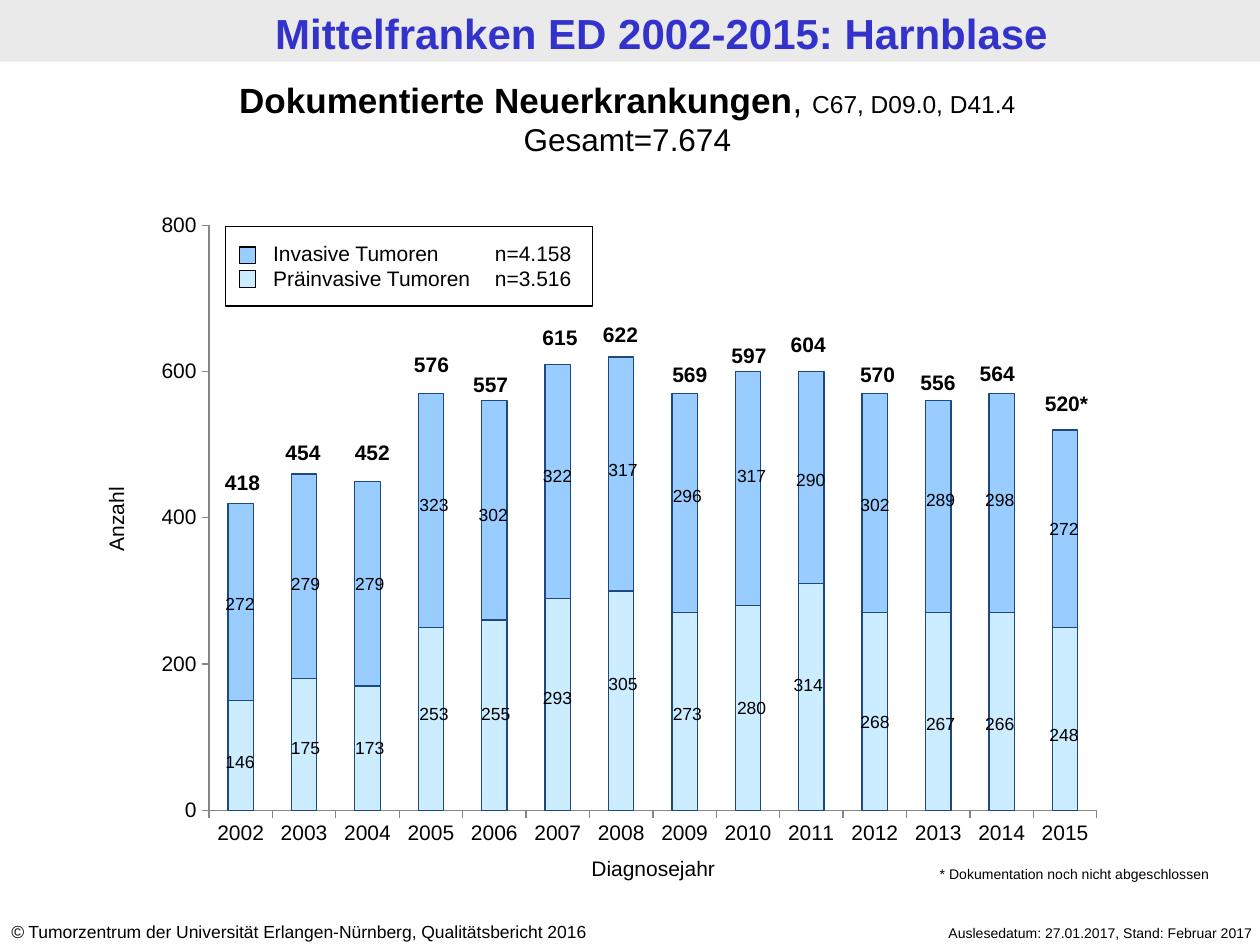
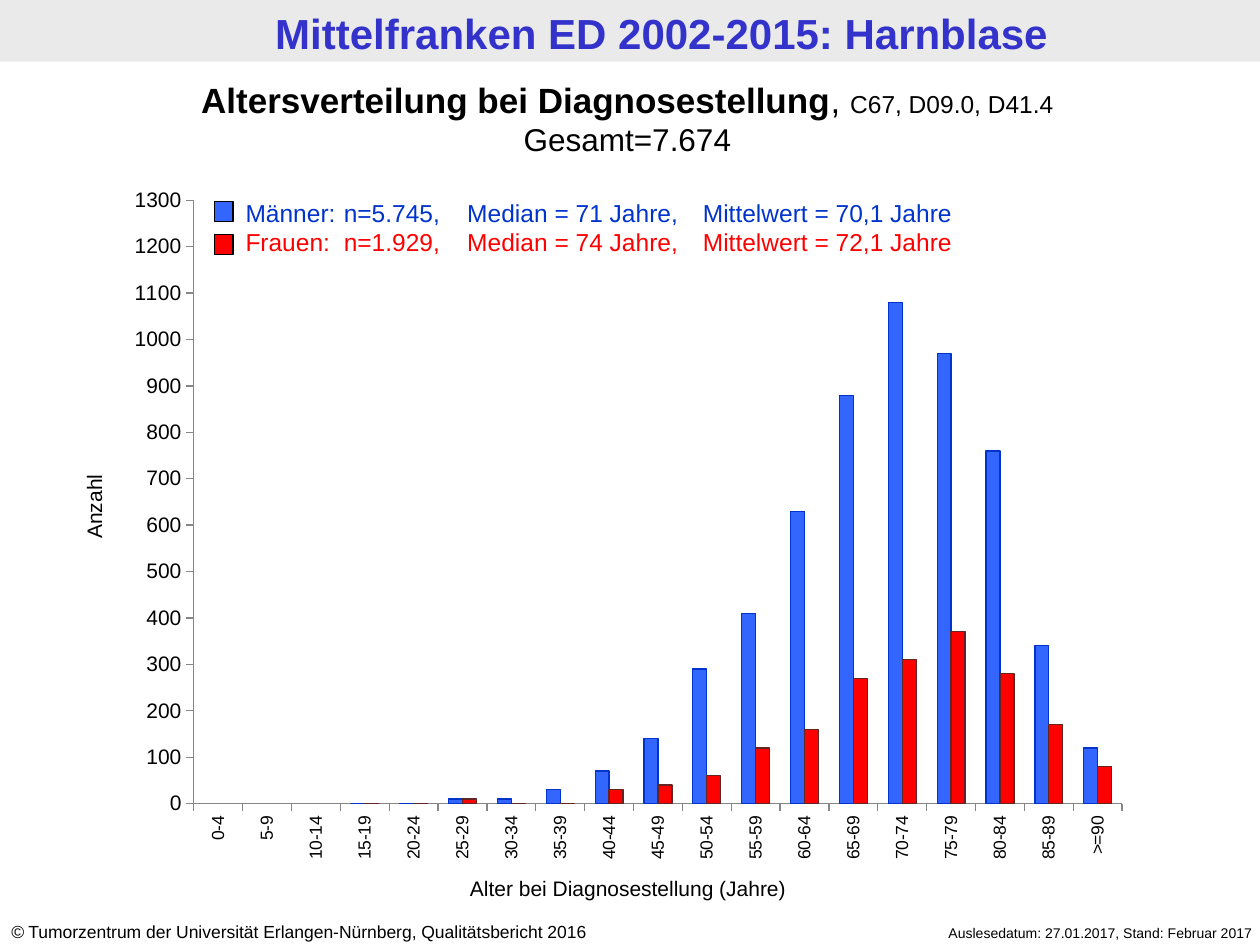
from dataclasses import dataclass
from typing import NamedTuple, Optional

from lxml import etree
from pptx import Presentation
from pptx import util as u
from pptx.chart.data import CategoryChartData
from pptx.dml.color import RGBColor
from pptx.enum import chart as ch
from pptx.enum import shapes, text
from pptx.oxml import parse_xml
from pptx.oxml.ns import nsdecls, qn

FONT = "Arial"
BLACK = RGBColor(0x00, 0x00, 0x00)
BAND_GREY = RGBColor(0xEA, 0xEA, 0xEA)
TITLE_BLUE = RGBColor(0x33, 0x33, 0xCC)
AXIS_GREY = RGBColor(0x86, 0x86, 0x86)
PREINVASIVE = RGBColor(0xCC, 0xEC, 0xFF)
INVASIVE = RGBColor(0x99, 0xCC, 0xFF)
BAR_EDGE = RGBColor(0x1F, 0x49, 0x7D)
MEN = RGBColor(0x33, 0x66, 0xFF)
MEN_DARK = RGBColor(0x00, 0x33, 0xCC)
WOMEN = RGBColor(0xFF, 0x00, 0x00)
WOMEN_DARK = RGBColor(0x63, 0x25, 0x23)

LEFT, CENTER, RIGHT = (text.PP_ALIGN.LEFT, text.PP_ALIGN.CENTER,
                       text.PP_ALIGN.RIGHT)


class Box(NamedTuple):
    left: float
    top: float
    width: float
    height: float

    def inches(self) -> list:
        return [u.Inches(length) for length in self]


class Run(NamedTuple):
    text: str
    size: Optional[float] = None
    bold: Optional[bool] = None
    italic: Optional[bool] = None
    color: Optional[RGBColor] = None


class Bars(NamedTuple):
    name: str
    values: list
    fill: RGBColor
    edge: RGBColor


class Year(NamedTuple):
    """Case numbers of one year and the places of their labels."""
    year: int
    preinvasive: int
    invasive: int
    total_x: float
    total_y: float
    value_x: float
    invasive_y: float
    preinvasive_y: float
    mark: str = ""
    preinvasive_shift: float = 0


@dataclass
class BarChart:
    box: Box
    kind: ch.XL_CHART_TYPE
    categories: list
    bars: list
    maximum: int
    step: int
    overlap: int
    plot: Box  # fractions of the chart area
    category_size: int = 12
    upright_categories: bool = False


YEARS = [
    Year(2002, 146, 272, 1.61, 3.68, 1.69, 4.66, 5.91),
    Year(2003, 175, 279, 2.09, 3.44, 2.21, 4.50, 5.80),
    Year(2004, 173, 279, 2.64, 3.44, 2.72, 4.50, 5.80),
    Year(2005, 253, 323, 3.11, 2.74, 3.23, 3.87, 5.53),
    Year(2006, 255, 302, 3.58, 2.90, 3.70, 3.95, 5.53,
         preinvasive_shift=0.02),
    Year(2007, 293, 322, 4.13, 2.53, 4.21, 3.64, 5.40),
    Year(2008, 305, 317, 4.61, 2.50, 4.73, 3.59, 5.29),
    Year(2009, 273, 296, 5.16, 2.82, 5.24, 3.80, 5.53),
    Year(2010, 280, 317, 5.63, 2.67, 5.75, 3.64, 5.48),
    Year(2011, 314, 290, 6.10, 2.58, 6.22, 3.67, 5.30,
         preinvasive_shift=-0.02),
    Year(2012, 268, 302, 6.65, 2.82, 6.73, 3.87, 5.59),
    Year(2013, 267, 289, 7.13, 2.88, 7.25, 3.83, 5.61),
    Year(2014, 266, 298, 7.60, 2.81, 7.72, 3.83, 5.61),
    Year(2015, 248, 272, 8.15, 3.05, 8.23, 4.06, 5.70, mark="*"),
]

AGE_GROUPS = [f"{age}-{age + 4}" for age in range(0, 90, 5)] + [">=90"]
MEN_BY_AGE = [None, None, None, 0, 0, 10, 10, 30, 70, 140, 290, 410, 630,
              880, 1080, 970, 760, 340, 120]
WOMEN_BY_AGE = [None, None, None, 0, 0, 10, 0, 0, 30, 40, 60, 120, 160,
                270, 310, 370, 280, 170, 80]


def add_text(slide, content, box: Box, *, size: float = 12,
             color: RGBColor = BLACK, bold: bool = False,
             align: text.PP_ALIGN = LEFT, wrap: bool = True,
             rotation: float = 0, tabs: tuple = (),
             inset_left: float = 0.1) -> None:
    """Write a string, or a list of paragraphs that are lists of runs."""
    area = slide.shapes.add_textbox(*box.inches())
    area.rotation = rotation
    frame = area.text_frame
    frame.word_wrap = wrap
    frame.auto_size = text.MSO_AUTO_SIZE.SHAPE_TO_FIT_TEXT
    frame.margin_left = u.Inches(inset_left)
    paragraphs = [[Run(content)]] if isinstance(content, str) else content
    for index, runs in enumerate(paragraphs):
        paragraph = frame.add_paragraph() if index else frame.paragraphs[0]
        paragraph.alignment = align
        if tabs:
            stops = etree.SubElement(paragraph._p.get_or_add_pPr(),
                                     qn("a:tabLst"))
            for stop in tabs:
                etree.SubElement(stops, qn("a:tab"), algn="l",
                                 pos=str(int(u.Inches(stop))))
        for part in runs:
            run = paragraph.add_run()
            run.text = part.text
            font = run.font
            font.name = FONT
            font.size = u.Pt(part.size or size)
            font.bold = bold if part.bold is None else part.bold
            font.italic = part.italic
            font.color.rgb = part.color or color


def add_rect(slide, box: Box, fill: Optional[RGBColor] = None,
             line: Optional[RGBColor] = None) -> None:
    rect = slide.shapes.add_shape(shapes.MSO_SHAPE.RECTANGLE, *box.inches())
    rect.shadow.inherit = False
    if fill is None:
        rect.fill.background()
    else:
        rect.fill.solid()
        rect.fill.fore_color.rgb = fill
    if line is None:
        rect.line.fill.background()
    else:
        rect.line.color.rgb = line
        rect.line.width = u.Pt(0.75)


def place_plot(chart, plot: Box) -> None:
    """Fix the inner plot area inside the chart area."""
    area = chart._chartSpace.chart.plotArea
    for layout in area.findall(qn("c:layout")):
        area.remove(layout)
    sides = "".join(f'<c:{tag} val="{value}"/>'
                    for tag, value in zip("xywh", plot))
    area.insert(0, parse_xml(
        f'<c:layout {nsdecls("c")}><c:manualLayout>'
        '<c:layoutTarget val="inner"/><c:xMode val="edge"/>'
        f'<c:yMode val="edge"/>{sides}</c:manualLayout></c:layout>'))


def add_bar_chart(slide, model: BarChart) -> None:
    data = CategoryChartData()
    data.categories = model.categories
    for bars in model.bars:
        data.add_series(bars.name, bars.values)
    chart = slide.shapes.add_chart(model.kind, *model.box.inches(),
                                   data).chart
    chart.has_legend = False
    chart.has_title = False
    chart.font.name = FONT
    chart.font.size = u.Pt(12)
    chart.font.color.rgb = BLACK
    place_plot(chart, model.plot)

    plot = chart.plots[0]
    plot.gap_width = 150
    plot.overlap = model.overlap
    plot.vary_by_categories = False
    for series, bars in zip(plot.series, model.bars):
        series.format.fill.solid()
        series.format.fill.fore_color.rgb = bars.fill
        series.format.line.color.rgb = bars.edge
        series.format.line.width = u.Pt(0.75)

    for axis, size in ((chart.category_axis, model.category_size),
                       (chart.value_axis, 12)):
        axis.has_major_gridlines = False
        axis.major_tick_mark = ch.XL_TICK_MARK.OUTSIDE
        axis.minor_tick_mark = ch.XL_TICK_MARK.NONE
        axis.format.line.color.rgb = AXIS_GREY
        axis.format.line.width = u.Pt(0.75)
        axis.tick_labels.font.name = FONT
        axis.tick_labels.font.size = u.Pt(size)
        axis.tick_labels.font.color.rgb = BLACK
    chart.value_axis.minimum_scale = 0
    chart.value_axis.maximum_scale = model.maximum
    chart.value_axis.major_unit = model.step
    if model.upright_categories:
        body = chart.category_axis._element.find(
            f'{qn("c:txPr")}/{qn("a:bodyPr")}')
        body.set("rot", "-5400000")
        body.set("vert", "horz")


def add_page(deck, heading: str):
    """Blank slide with the title band, both footers and a heading."""
    slide = deck.slides.add_slide(deck.slide_layouts[6])
    add_rect(slide, Box(0, 0, 10, 0.49), fill=BAND_GREY)
    add_text(slide, "Mittelfranken ED 2002-2015: Harnblase",
             Box(0.06, 0.01, 10, 0.49), size=24, bold=True,
             color=TITLE_BLUE, align=CENTER, inset_left=0.48)
    source = " Tumorzentrum der Universität Erlangen-Nürnberg, Qualitätsbericht 2016"
    add_text(slide, [[Run("©", italic=True), Run(source)]],
             Box(-0.01, 7.26, 5.24, 0.27), size=10)
    add_text(slide, "Auslesedatum: 27.01.2017, Stand: Februar 2017",
             Box(6.65, 7.29, 3.39, 0.24), size=8, align=RIGHT)
    add_text(slide, [[Run(heading, 20, bold=True), Run(", ", 20),
                      Run("C67, D09.0, D41.4", 14)],
                     [Run("Gesamt=7.674", 18)]],
             Box(-0.04, 0.57, 10.04, 0.74), align=CENTER)
    return slide


def add_new_cases(deck) -> None:
    slide = add_page(deck, "Dokumentierte Neuerkrankungen")
    # Columns are drawn to the nearest ten; the labels give exact numbers
    add_bar_chart(slide, BarChart(
        Box(1.15, 1.64, 7.71, 5.14), ch.XL_CHART_TYPE.COLUMN_STACKED,
        [str(y.year) for y in YEARS],
        [Bars("Präinvasive Tumoren",
              [round(y.preinvasive, -1) for y in YEARS],
              PREINVASIVE, BAR_EDGE),
         Bars("Invasive Tumoren", [round(y.invasive, -1) for y in YEARS],
              INVASIVE, BAR_EDGE)],
        maximum=800, step=200, overlap=100,
        plot=Box(0.066, 0.029, 0.914, 0.903)))
    add_text(slide, "Diagnosejahr", Box(4.06, 6.74, 2.25, 0.3), align=CENTER)
    add_text(slide, "Anzahl", Box(0.31, 3.97, 1.22, 0.3), align=CENTER,
             rotation=270)

    # Legend
    add_text(slide, [[Run("Invasive Tumoren\tn=4.158")],
                     [Run("Präinvasive Tumoren\tn=3.516")]],
             Box(2.07, 1.86, 2.64, 0.71), tabs=(1.76,))
    add_rect(slide, Box(1.79, 1.8, 2.91, 0.63), line=BLACK)
    for row, fill in enumerate((INVASIVE, PREINVASIVE)):
        add_rect(slide, Box(1.9, 1.96 + 0.19 * row, 0.13, 0.13), fill, BLACK)

    # Totals above the columns, case numbers inside them
    for y in YEARS:
        add_text(slide, f"{y.preinvasive + y.invasive}{y.mark}",
                 Box(y.total_x, y.total_y, 0.63, 0.3), bold=True,
                 align=CENTER, wrap=False)
        for count, shift, top in (
                (y.invasive, 0, y.invasive_y),
                (y.preinvasive, y.preinvasive_shift, y.preinvasive_y)):
            add_text(slide, str(count),
                     Box(y.value_x + shift, top, 0.43, 0.27),
                     size=10, align=CENTER, wrap=False)
    add_text(slide, "* Dokumentation noch nicht abgeschlossen",
             Box(7.36, 6.82, 2.48, 0.24), size=8)


def add_age_distribution(deck) -> None:
    slide = add_page(deck, "Altersverteilung bei Diagnosestellung")
    add_bar_chart(slide, BarChart(
        Box(0.91, 1.39, 8.16, 5.55), ch.XL_CHART_TYPE.COLUMN_CLUSTERED,
        AGE_GROUPS,
        [Bars("Männer", MEN_BY_AGE, MEN, MEN_DARK),
         Bars("Frauen", WOMEN_BY_AGE, WOMEN, WOMEN_DARK)],
        maximum=1300, step=100, overlap=0,
        plot=Box(0.077, 0.036, 0.903, 0.863),
        category_size=10, upright_categories=True))

    # Legend
    men = "Männer:\tn=5.745,\tMedian = 71 Jahre,\tMittelwert = 70,1 Jahre"
    women = "Frauen:\tn=1.929,\tMedian = 74 Jahre,\tMittelwert = 72,1 Jahre"
    add_text(slide, [[Run(men, color=MEN_DARK)], [Run(women, color=WOMEN)]],
             Box(1.85, 1.52, 6.85, 0.57), size=14, tabs=(0.78, 1.76, 3.63))
    for row, fill in enumerate((MEN, WOMEN)):
        add_rect(slide, Box(1.7, 1.6 + 0.26 * row, 0.15, 0.16), fill, BLACK)

    add_text(slide, "Alter bei Diagnosestellung (Jahre)",
             Box(3.45, 6.9, 3.07, 0.3), align=CENTER)
    add_text(slide, "Anzahl", Box(-0.56, 3.87, 2.61, 0.3), align=CENTER,
             rotation=270)


def main() -> None:
    deck = Presentation()
    deck.slide_width, deck.slide_height = u.Inches(10), u.Inches(7.5)
    add_new_cases(deck)
    add_age_distribution(deck)
    deck.save("out.pptx")


if __name__ == "__main__":
    main()
